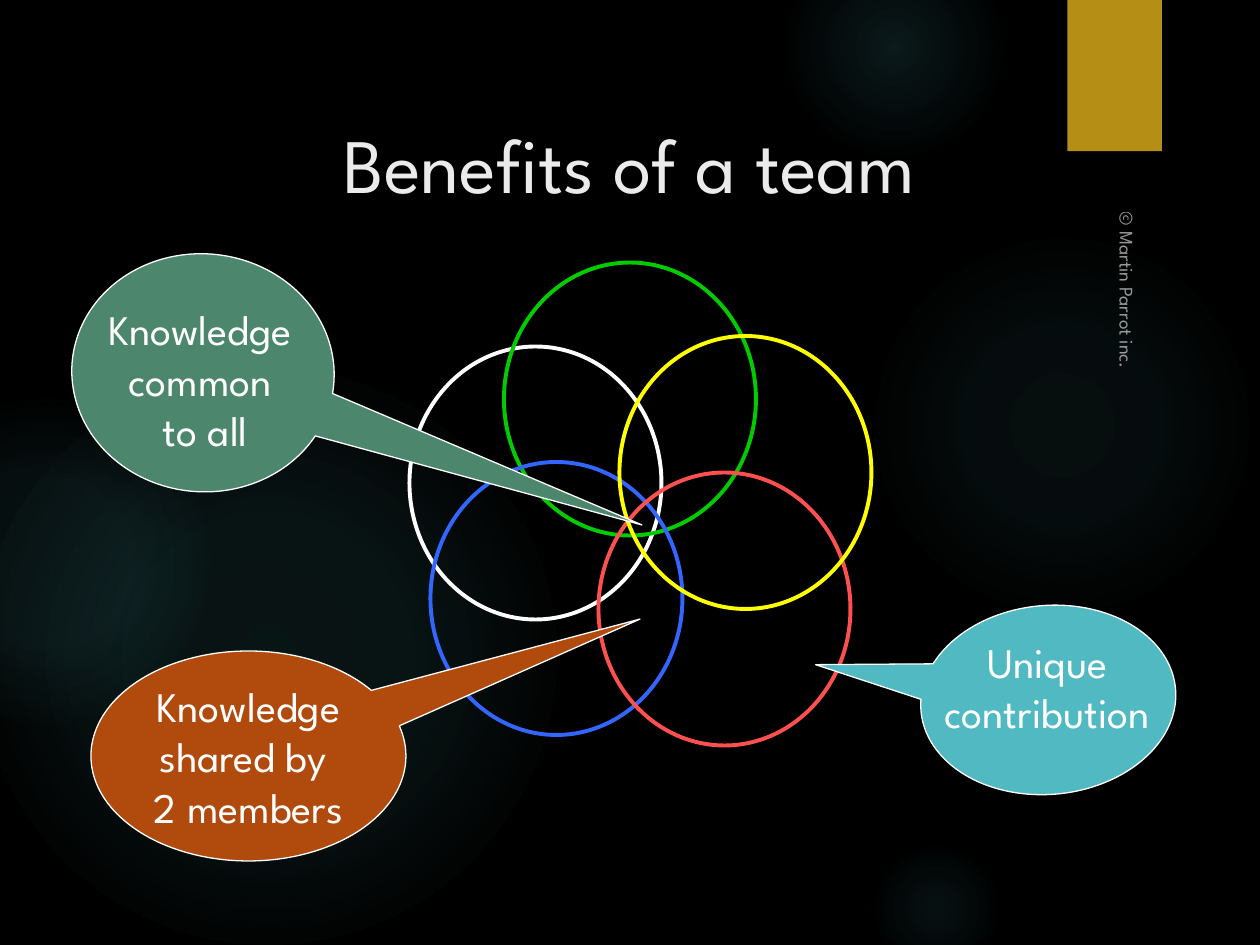
from dataclasses import dataclass

from lxml.etree import SubElement
from pptx import Presentation
from pptx.dml.color import RGBColor
from pptx.enum.shapes import MSO_SHAPE
from pptx.enum.text import MSO_ANCHOR, PP_ALIGN
from pptx.oxml.ns import qn
from pptx.util import Pt


@dataclass(frozen=True)
class Theme:
    font: str = "League Spartan"
    background: str = "000000"
    glow: str = "50B9C1"
    ribbon: str = "B58E15"
    shadow: str = "000000"
    heading: str = "EBEBEB"
    text: str = "FFFFFF"
    common: str = "4B866D"
    shared: str = "B04A0D"
    unique: str = "50B9C1"
    members: tuple = ("FFFFFF", "00CC00", "3366FF", "FF5050", "FFFF00")
    title_size: float = 44
    label_size: float = 24
    notice_size: float = 11


def set_opacity(color_node, percent):
    SubElement(color_node, qn("a:alpha"), val=str(percent * 1000))


def add_color(parent, color, percent):
    """Append an RGB colour with its opacity in percent."""
    set_opacity(SubElement(parent, qn("a:srgbClr"), val=color), percent)


class TeamSlide:
    """Holds the theme and the current slide."""

    def __init__(self, slide, theme):
        self.slide, self.theme = slide, theme
        fill = slide.background.fill
        fill.solid()
        fill.fore_color.rgb = RGBColor.from_string(theme.background)

    def shape(self, kind, box, fill=None, line=None, width=0.75, rotation=0):
        shape = self.slide.shapes.add_shape(kind, *map(Pt, box))
        shape.shadow.inherit = False
        shape.rotation = rotation
        if fill:
            shape.fill.solid()
            shape.fill.fore_color.rgb = RGBColor.from_string(fill)
        else:
            shape.fill.background()
        if line:
            shape.line.color.rgb = RGBColor.from_string(line)
            shape.line.width = Pt(width)
        else:
            shape.line.fill.background()
        return shape

    def glow(self, left, top, size, stops):
        """Draw a disc that fades out; stops are (position, opacity) in percent."""
        disc = self.shape(MSO_SHAPE.OVAL, (left, top, size, size))
        no_fill = disc.element.spPr.find(qn("a:noFill"))
        gradient = no_fill.makeelement(qn("a:gradFill"), {"rotWithShape": "1"})
        no_fill.getparent().replace(no_fill, gradient)
        stop_list = SubElement(gradient, qn("a:gsLst"))
        for position, opacity in stops:
            stop = SubElement(stop_list, qn("a:gs"), pos=str(position * 1000))
            add_color(stop, self.theme.glow, opacity)
        spread = SubElement(gradient, qn("a:path"), {"path": "circle"})
        SubElement(spread, qn("a:fillToRect"), {side: "50000" for side in "ltrb"})

    def ribbon(self, box):
        ribbon = self.shape(MSO_SHAPE.RECTANGLE, box, self.theme.ribbon)
        effects = ribbon.element.spPr.find(qn("a:effectLst"))
        shadow = SubElement(effects, qn("a:outerShdw"), blurRad=str(Pt(3)),
                            dist=str(Pt(2)), dir="5400000", rotWithShape="0")
        add_color(shadow, self.theme.shadow, 45)

    def callout(self, box, tip, fill, rotation=0):
        callout = self.shape(MSO_SHAPE.OVAL_CALLOUT, box, fill,
                             self.theme.text, rotation=rotation)
        callout.adjustments[0], callout.adjustments[1] = tip
        return callout

    def label(self, holder, lines, size, color=None, align=PP_ALIGN.CENTER,
              anchor=MSO_ANCHOR.TOP, wrap=False, opacity=100):
        """Put one paragraph per line into a shape or text box."""
        frame = holder.text_frame
        frame.word_wrap = wrap
        frame.vertical_anchor = anchor
        for index, line in enumerate(lines):
            paragraph = frame.add_paragraph() if index else frame.paragraphs[0]
            paragraph.alignment = align
            run = paragraph.add_run()
            run.text = line
            run.font.name = self.theme.font
            run.font.size = Pt(size)
            run.font.color.rgb = RGBColor.from_string(color or self.theme.text)
        if opacity < 100:
            for color_node in holder.element.txBody.iter(qn("a:srgbClr")):
                set_opacity(color_node, opacity)

    def text(self, box, lines, size, rotation=0, **style):
        text_box = self.slide.shapes.add_textbox(*map(Pt, box))
        text_box.rotation = rotation
        self.label(text_box, lines, size, **style)


def main():
    theme = Theme()
    deck = Presentation()
    deck.slide_width, deck.slide_height = Pt(720), Pt(540)
    page = TeamSlide(deck.slides.add_slide(deck.slide_layouts[6]), theme)

    glows = [
        (496, 132, 222, [(0, 7), (36, 6), (69, 0)]),
        (448, -36, 126, [(0, 14), (36, 7), (73, 0)]),
        (496, 480, 78, [(0, 9), (36, 5), (66, 0)]),
        (-12, 210, 330, [(0, 11), (36, 10), (75, 0)]),
        (-66, 228, 186, [(0, 8), (36, 8), (72, 0)]),
    ]
    for glow in glows:
        page.glow(*glow)
    page.ribbon((610, 0, 54, 86.4))
    page.text((54, 48, 612, 90), ["Benefits of a team"], theme.title_size,
              color=theme.heading, anchor=MSO_ANCHOR.MIDDLE, wrap=True)

    member_corners = [(234, 198), (288, 150), (246, 264), (342, 270), (354, 192)]
    for corner, color in zip(member_corners, theme.members):
        page.shape(MSO_SHAPE.OVAL, (*corner, 144, 156), line=color, width=2.25)

    page.callout((48, 138, 136, 150), (-0.499, 1.711), theme.common, 274.3)
    page.text((39.6, 170, 155.5, 94.3), ["Knowledge ", "common ", "to all"],
              theme.label_size)

    shared = page.callout((52, 372, 180, 120), (1.243, -0.652), theme.shared)
    page.label(shared, ["Knowledge", "shared by ", "2 members"],
               theme.label_size, anchor=MSO_ANCHOR.MIDDLE)

    page.callout((545, 327, 108, 146), (-0.293, 0.895), theme.unique, 85)
    page.text((520.5, 360, 156, 65.5), ["Unique", "contribution"],
              theme.label_size)

    page.text((491, 257, 304, 18), ["© Martin Parrot inc."], theme.notice_size,
              rotation=90, align=PP_ALIGN.LEFT, anchor=MSO_ANCHOR.BOTTOM,
              wrap=True, opacity=60)
    deck.save("out.pptx")


if __name__ == "__main__":
    main()
